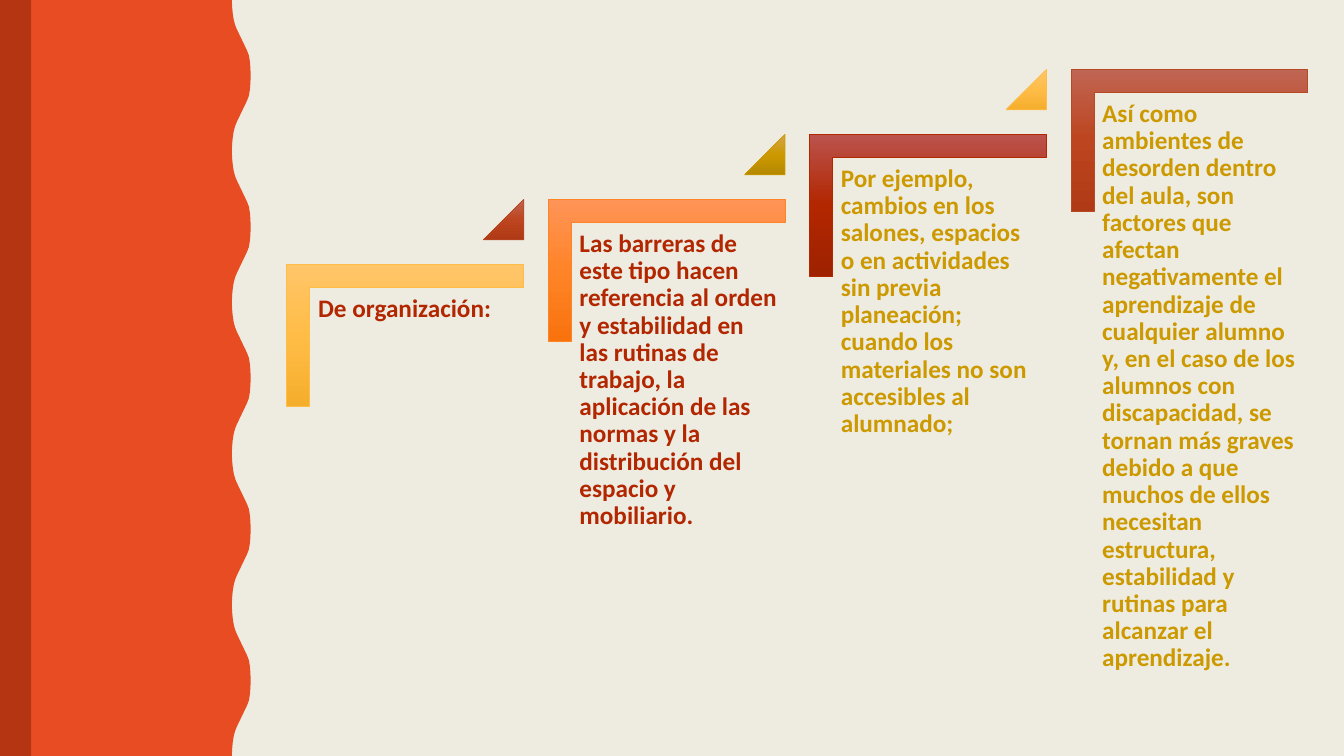
from dataclasses import dataclass

from lxml import etree
from pptx import Presentation
from pptx.dml.color import RGBColor
from pptx.enum import shapes, text
from pptx.oxml import ns
from pptx.util import Pt


@dataclass(frozen=True)
class Theme:
    background: str = "EEECE1"
    band: str = "E84C22"
    band_edge: str = "B53513"
    dark_text: str = "B22600"
    gold_text: str = "CC9900"
    font: str = "Calibri"
    text_size: float = 18
    line_width: float = 0.5
    # Each shade: top, middle and bottom of the gradient, then the outline
    amber: tuple = ("FFC569", "FFBD47", "F5AD2C", "FFBD47")
    rust: tuple = ("BF6553", "BD451F", "AF3A15", "B64926")
    orange: tuple = ("FF9458", "FF8427", "F8720D", "FF8427")
    gold: tuple = ("D3A54E", "CC9900", "B58800", "CC9900")
    red: tuple = ("BB534D", "B22600", "9E2200", "B22600")


THEME = Theme()
SLIDE_WIDTH, SLIDE_HEIGHT = 960, 540
HALF_WAVE = [(0, 0), (5, 0.2), (10, 0.7), (14.4, 1.4), (18, 2.4), (21, 3.6),
             (36, 10.8), (39.6, 12.2), (44, 12.9), (49, 13.3), (54, 13.4)]

STEPS = [
    ("De organización:", THEME.amber, THEME.dark_text, THEME.rust),
    ("Las barreras de este tipo hacen referencia al orden y estabilidad en las "
     "rutinas de trabajo, la aplicación de las normas y la distribución del "
     "espacio y mobiliario.", THEME.orange, THEME.dark_text, THEME.gold),
    ("Por ejemplo, cambios en los salones, espacios o en actividades sin previa "
     "planeación; cuando los materiales no son accesibles al alumnado;",
     THEME.red, THEME.gold_text, THEME.amber),
    ("Así como ambientes de desorden dentro del aula, son factores que afectan "
     "negativamente el aprendizaje de cualquier alumno y, en el caso de los "
     "alumnos con discapacidad, se tornan más graves debido a que muchos de "
     "ellos necesitan estructura, estabilidad y rutinas para alcanzar el "
     "aprendizaje.", THEME.rust, THEME.gold_text, None),
]


def fill_solid(shape, color):
    shape.shadow.inherit = False
    shape.fill.solid()
    shape.fill.fore_color.rgb = RGBColor.from_string(color)
    shape.line.fill.background()


def fill_shade(shape, shade):
    """Fill top to bottom with three colours, whatever the shape's rotation."""
    shape.shadow.inherit = False
    shape.fill.gradient()
    gradient = shape.element.spPr.find(ns.qn("a:gradFill"))
    gradient.set("rotWithShape", "0")
    for child in list(gradient):
        gradient.remove(child)
    stops = etree.SubElement(gradient, ns.qn("a:gsLst"))
    for position, color in zip(("0", "50000", "100000"), shade):
        stop = etree.SubElement(stops, ns.qn("a:gs"), pos=position)
        etree.SubElement(stop, ns.qn("a:srgbClr"), val=color)
    etree.SubElement(gradient, ns.qn("a:lin"), ang="5400000", scaled="0")
    shape.line.color.rgb = RGBColor.from_string(shade[3])
    shape.line.width = Pt(THEME.line_width)


def add_wavy_band(slide, left, top, width, height):
    """Side band with a wavy right edge and a darker strip on the left."""
    period = 108
    trough = width - HALF_WAVE[-1][1]
    wave = HALF_WAVE + [(period - y, x) for y, x in reversed(HALF_WAVE[:-1])]
    edge = [(left + trough + x, top + start + y)
            for start in range(0, height, period) for y, x in wave]
    outline = edge + [(left, top + height)]
    builder = slide.shapes.build_freeform(Pt(left), Pt(top))
    builder.add_line_segments([(Pt(x), Pt(y)) for x, y in outline], close=True)
    fill_solid(builder.convert_to_shape(), THEME.band)

    strip = slide.shapes.add_shape(shapes.MSO_SHAPE.RECTANGLE, Pt(left), Pt(top),
                                   Pt(22.2), Pt(height))
    fill_solid(strip, THEME.band_edge)


def add_step(slide, left, top, width, height, rise, step):
    """One stair: bracket, its text, and a triangle leading to the next stair."""
    words, bracket_shade, text_color, triangle_shade = step
    inset = (width - height) / 2
    bracket = slide.shapes.add_shape(shapes.MSO_SHAPE.CORNER, Pt(left + inset),
                                     Pt(top - inset), Pt(height), Pt(width))
    bracket.rotation = 90
    bracket.adjustments[0] = bracket.adjustments[1] = 0.161
    fill_shade(bracket, bracket_shade)

    box = slide.shapes.add_textbox(Pt(left + 16.9), Pt(top + 16.9),
                                   Pt(width - 16.9), Pt(134))
    frame = box.text_frame
    frame.word_wrap = True
    frame.auto_size = text.MSO_AUTO_SIZE.NONE
    frame.margin_left = frame.margin_right = Pt(5.4)
    frame.margin_top = frame.margin_bottom = Pt(5.4)
    paragraph = frame.paragraphs[0]
    paragraph.line_spacing = 0.9
    run = paragraph.add_run()
    run.text = words
    run.font.name = THEME.font
    run.font.size = Pt(THEME.text_size)
    run.font.bold = True
    run.font.color.rgb = RGBColor.from_string(text_color)

    if triangle_shade:
        side = 28.8
        triangle = slide.shapes.add_shape(
            shapes.MSO_SHAPE.ISOSCELES_TRIANGLE, Pt(left + width - side),
            Pt(top - rise), Pt(side), Pt(side))
        triangle.adjustments[0] = 1
        fill_shade(triangle, triangle_shade)


def add_staircase(slide, left, top, width):
    bracket_width, bracket_height, rise = 169.2, 101.5, 46.4
    stride = (width - bracket_width) / (len(STEPS) - 1)
    for index, step in enumerate(STEPS):
        add_step(slide, left + index * stride, top - index * rise,
                 bracket_width, bracket_height, rise, step)


def main():
    presentation = Presentation()
    presentation.slide_width = Pt(SLIDE_WIDTH)
    presentation.slide_height = Pt(SLIDE_HEIGHT)
    slide = presentation.slides.add_slide(presentation.slide_layouts[6])
    slide.background.fill.solid()
    slide.background.fill.fore_color.rgb = RGBColor.from_string(THEME.background)
    add_wavy_band(slide, 0, 0, 179, SLIDE_HEIGHT)
    add_staircase(slide, 204.9, 188.8, 729.3)
    presentation.save("out.pptx")


if __name__ == "__main__":
    main()
